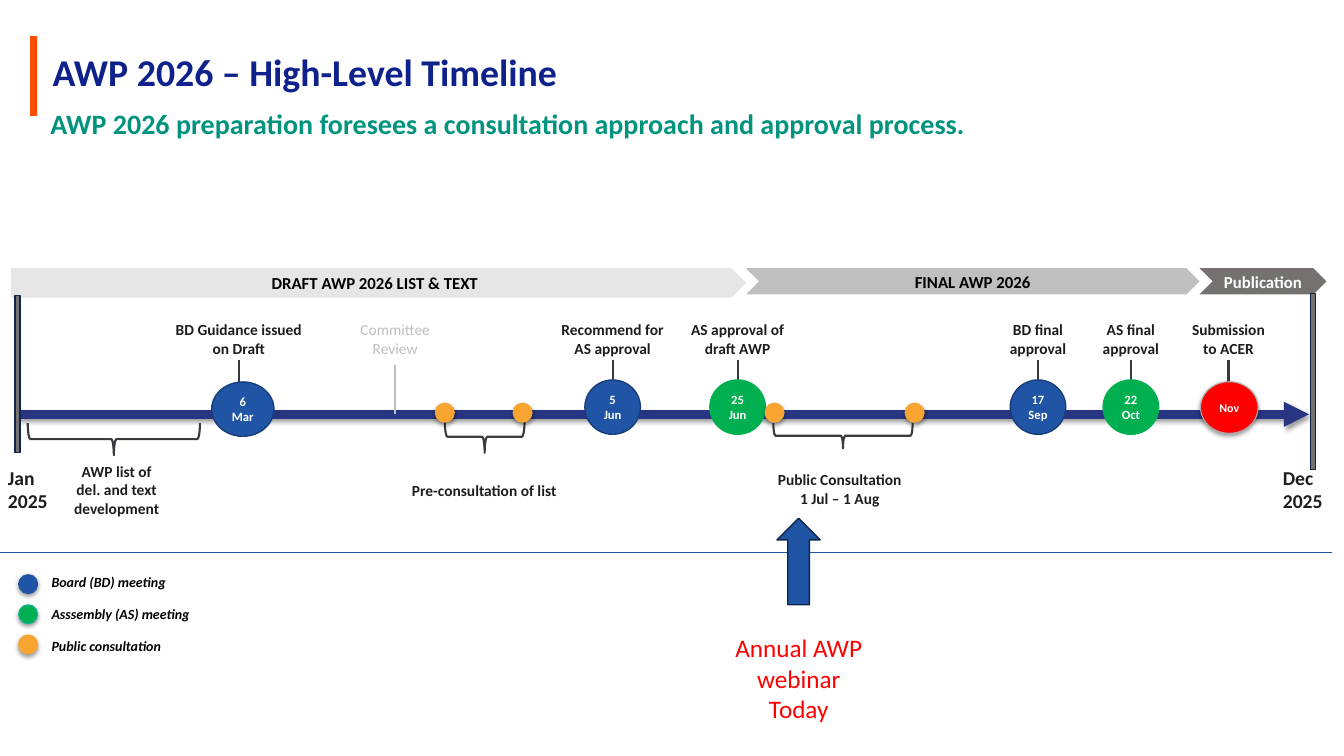
import dataclasses

import lxml.etree
import pptx
import pptx.dml.color
import pptx.enum.shapes
import pptx.enum.text
import pptx.oxml
import pptx.oxml.ns
import pptx.util

Cm = pptx.util.Cm
Pt = pptx.util.Pt
SHAPE = pptx.enum.shapes.MSO_SHAPE
ALIGN = pptx.enum.text.PP_ALIGN
ANCHOR = pptx.enum.text.MSO_ANCHOR
SHADOW = (
    '<a:effectLst xmlns:a="http://schemas.openxmlformats.org/drawingml/2006/main">'
    '<a:outerShdw blurRad="40000" dist="20000" dir="5400000" rotWithShape="0">'
    '<a:srgbClr val="000000"><a:alpha val="38000"/></a:srgbClr>'
    "</a:outerShdw></a:effectLst>"
)


@dataclasses.dataclass(frozen=True)
class Theme:
    font: str = "Calibri"
    accent: str = "FF4D00"
    title: str = "0F218B"
    subtitle: str = "00947F"
    ink: str = "1D1D20"
    black: str = "000000"
    white: str = "FFFFFF"
    stroke: str = "3A3A3F"
    axis: str = "283583"
    board: str = "2054A5"
    board_edge: str = "183E7A"
    assembly: str = "00B050"
    assembly_edge: str = "0FB29A"
    consultation: str = "F7A431"
    alert: str = "FF0000"
    alert_edge: str = "AFABAB"
    muted: str = "BFBFBF"
    pale: str = "E7E6E6"
    dark: str = "767171"
    navy: str = "0E2548"
    title_size: float = 27
    subtitle_size: float = 20
    callout_size: float = 18
    year_size: float = 14
    phase_size: float = 12
    label_size: float = 11
    legend_size: float = 10
    date_size: float = 9
    month_size: float = 8.5


class TimelineSlide:
    def __init__(self, deck, theme):
        self.theme = theme
        self.slide = deck.slides.add_slide(deck.slide_layouts[5])
        self.shapes = self.slide.shapes

    def rgb(self, color):
        return pptx.dml.color.RGBColor.from_string(color)

    def typeset(self, frame, lines, size, color, align=ALIGN.CENTER, anchor=ANCHOR.TOP,
                bold=True, italic=False, spacing=None):
        frame.word_wrap = True
        frame.auto_size = pptx.enum.text.MSO_AUTO_SIZE.NONE
        frame.vertical_anchor = anchor
        for index, line in enumerate(lines):
            paragraph = frame.paragraphs[0] if index == 0 else frame.add_paragraph()
            paragraph.alignment = align
            if spacing:
                paragraph.line_spacing = Pt(spacing)
            run = paragraph.add_run()
            run.text = line
            run.font.name = self.theme.font
            run.font.size = Pt(size)
            run.font.bold = bold
            run.font.italic = italic
            run.font.color.rgb = self.rgb(color)

    def title(self, text, left, top, width, height):
        heading = self.shapes.title
        heading.left, heading.top = Cm(left), Cm(top)
        heading.width, heading.height = Cm(width), Cm(height)
        self.typeset(heading.text_frame, [text], self.theme.title_size, self.theme.title,
                     ALIGN.LEFT, ANCHOR.MIDDLE, spacing=32)

    def text(self, lines, left, top, width, height, size, color, **style):
        box = self.shapes.add_textbox(Cm(left), Cm(top), Cm(width), Cm(height))
        self.typeset(box.text_frame, lines, size, color, **style)

    def shape(self, kind, left, top, width, height, fill=None, edge=None,
              weight=1, shadow=False):
        item = self.shapes.add_shape(kind, Cm(left), Cm(top), Cm(width), Cm(height))
        item.shadow.inherit = False
        if shadow:
            plain = item._element.spPr.find(pptx.oxml.ns.qn("a:effectLst"))
            plain.getparent().replace(plain, pptx.oxml.parse_xml(SHADOW))
        if fill:
            item.fill.solid()
            item.fill.fore_color.rgb = self.rgb(fill)
        else:
            item.fill.background()
        if edge:
            item.line.color.rgb = self.rgb(edge)
            item.line.width = Pt(weight)
        else:
            item.line.fill.background()
        return item

    def line(self, start, end, color, weight, arrow=False):
        x1, y1, x2, y2 = (Cm(value) for value in (*start, *end))
        connector = self.shapes.add_connector(
            pptx.enum.shapes.MSO_CONNECTOR.STRAIGHT, x1, y1, x2, y2)
        connector.line.color.rgb = self.rgb(color)
        connector.line.width = Pt(weight)
        properties = connector._element.spPr
        if arrow:
            outline = properties.find(pptx.oxml.ns.qn("a:ln"))
            lxml.etree.SubElement(outline, pptx.oxml.ns.qn("a:tailEnd"), type="triangle")
            properties.append(pptx.oxml.parse_xml(SHADOW))
        else:
            lxml.etree.SubElement(properties, pptx.oxml.ns.qn("a:effectLst"))

    def brace(self, left, right, top, depth):
        span = right - left
        bracket = self.shape(SHAPE.LEFT_BRACE, (left + right - depth) / 2,
                             top + (depth - span) / 2, depth, span,
                             edge=self.theme.stroke, weight=1.5)
        bracket.rotation = 270

    def dot(self, x, y, fill, edge):
        self.shape(SHAPE.OVAL, x - 0.24, y - 0.24, 0.48, 0.48, fill, edge, 0.75, True)

    def milestone(self, x, y, width, height, lines, size, fill, edge,
                  kind=SHAPE.FLOWCHART_CONNECTOR, weight=1, shadow=False):
        circle = self.shape(kind, x - width / 2, y - height / 2, width, height,
                            fill, edge, weight, shadow)
        frame = circle.text_frame
        frame.margin_left = frame.margin_right = Cm(0.1)
        self.typeset(frame, lines, size, self.theme.white, anchor=ANCHOR.MIDDLE)

    def phase(self, kind, left, width, height, name, fill, color):
        band = self.shape(kind, left, 6.76, width, height, fill)
        frame = band.text_frame
        frame.margin_left = frame.margin_right = 0
        frame.margin_top = frame.margin_bottom = 0
        self.typeset(frame, [name], self.theme.phase_size, color, anchor=ANCHOR.MIDDLE)


def main():
    theme = Theme()
    deck = pptx.Presentation()
    deck.slide_width, deck.slide_height = Cm(33.87), Cm(19.05)
    page = TimelineSlide(deck, theme)

    page.shape(SHAPE.RECTANGLE, 0.76, 0.91, 0.18, 2.01, theme.accent)
    page.title("AWP 2026 – High-Level Timeline", 1.07, 1.3, 32.28, 0.99)
    page.text(["AWP 2026 preparation foresees a consultation approach and approval process."],
              1.02, 2.46, 32.28, 1.22, theme.subtitle_size, theme.subtitle,
              align=ALIGN.LEFT, anchor=ANCHOR.MIDDLE, spacing=26)

    events = [
        (6.02, 3.96, "BD Guidance issued on Draft"),
        (15.44, 3.35, "Recommend for AS approval"),
        (18.59, 3.2, "AS approval of draft AWP"),
        (26.16, 3.2, "BD final approval"),
        (28.5, 3.2, "AS final approval"),
        (30.96, 2.64, "Submission to ACER"),
    ]
    for x, width, label in events:
        page.line((x, 9.07), (x, 10.03), theme.stroke, 1.5)
        page.text([label], x - width / 2, 7.95, width, 1.19, theme.label_size, theme.ink)
    axis_y = 10.44
    page.line((0.46, axis_y), (32.99, axis_y), theme.axis, 6, arrow=True)
    page.line((9.96, 9.19), (9.96, axis_y), theme.muted, 1.5)
    page.text(["Committee Review"], 8.32, 7.95, 3.28, 1.19, theme.label_size,
              theme.muted, bold=False)

    periods = [
        ((0.7, 5.04, 10.66, 0.81), (1.57, 11.51, 2.74, 1.68),
         ["AWP list of del. and text development"]),
        ((11.21, 13.22, 10.6, 0.81), (10.11, 11.99, 4.19, 0.74),
         ["Pre-consultation of list"]),
        ((19.49, 23, 10.66, 0.64), (19.3, 11.73, 3.73, 1.19),
         ["Public Consultation", "1 Jul – 1 Aug"]),
    ]
    for bracket, place, lines in periods:
        page.brace(*bracket)
        page.text(lines, *place, theme.label_size, theme.ink)

    board = (theme.board, theme.board_edge)
    assembly = (theme.assembly, theme.assembly)
    page.milestone(6.12, 10.31, 1.57, 1.37, ["6", "Mar"], theme.date_size, *board)
    for x, date, colors in [(15.44, ["5", "Jun"], board), (18.59, ["25", "Jun"], assembly),
                            (26.16, ["17 Sep"], board), (28.5, ["22", "Oct"], assembly)]:
        page.milestone(x, 10.26, 1.4, 1.37, date, theme.date_size, *colors)
    page.milestone(30.98, 10.27, 1.45, 1.3, ["Nov"], theme.month_size, theme.alert,
                   theme.alert_edge, SHAPE.OVAL, 0.75, True)
    for x in (11.21, 13.17, 19.52, 23.05):
        page.dot(x, 10.4, theme.consultation, theme.consultation)

    page.phase(SHAPE.CHEVRON, 18.8, 11.43, 0.66, "FINAL AWP 2026", theme.muted, theme.black)
    page.phase(SHAPE.PENTAGON, 0.28, 18.52, 0.74, "DRAFT AWP 2026 LIST & TEXT",
               theme.pale, theme.black)
    page.phase(SHAPE.CHEVRON, 30.23, 3.2, 0.66, "Publication", theme.dark, theme.white)

    for post_x, top, height, year_x, year in [(0.38, 7.44, 3.96, -0.05, "Jan 2025"),
                                              (33.02, 7.39, 4.45, 32.08, "Dec 2025")]:
        page.shape(SHAPE.RECTANGLE, post_x, top, 0.13, height, theme.dark, theme.navy)
        page.text([year], year_x, 11.61, 1.83, 1.45, theme.year_size, theme.ink,
                  align=ALIGN.LEFT)

    page.line((0, 13.92), (33.58, 13.92), theme.board, 0.5)
    legend = [
        ("Board (BD) meeting", theme.board, theme.board),
        ("Asssembly (AS) meeting", theme.assembly, theme.assembly_edge),
        ("Public consultation", theme.consultation, theme.consultation),
    ]
    for row, (meaning, fill, edge) in enumerate(legend):
        page.dot(0.71, 14.72 + row * 0.76, fill, edge)
        page.text([meaning], 1.05, 14.33 + row * 0.81, 4.6, 0.69, theme.legend_size,
                  theme.black, align=ALIGN.LEFT, italic=True)

    page.shape(SHAPE.UP_ARROW, 19.58, 13.06, 1.09, 2.18, theme.board, theme.navy)
    page.text(["Annual AWP webinar", "Today"], 18.24, 15.82, 3.78, 2.57,
              theme.callout_size, theme.alert, bold=False)
    deck.save("out.pptx")


if __name__ == "__main__":
    main()
